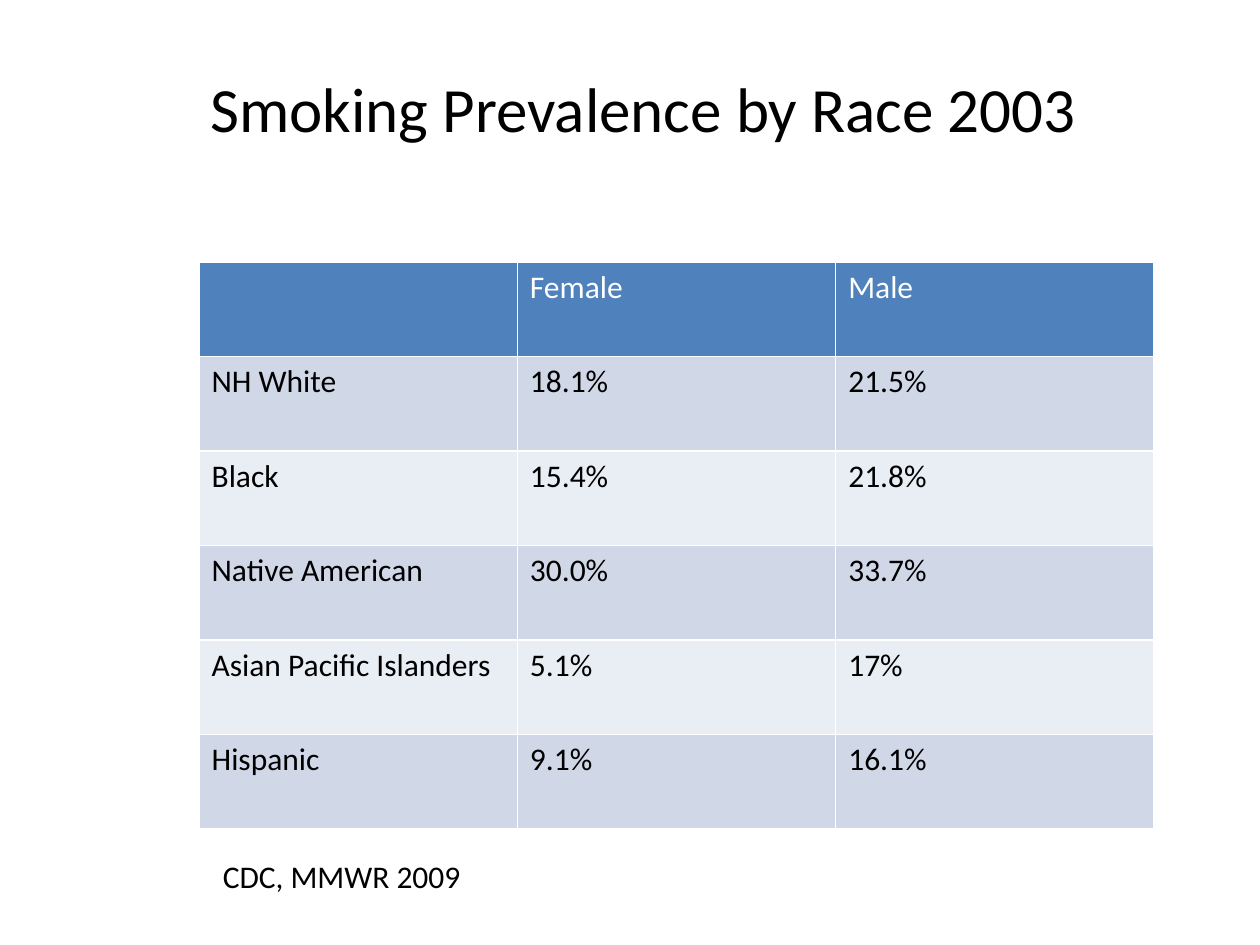
"""Build the slide on smoking prevalence by race."""
from dataclasses import dataclass

from pptx import Presentation
from pptx.dml.color import RGBColor
from pptx.enum.text import MSO_ANCHOR, MSO_AUTO_SIZE
from pptx.util import Inches, Pt

FONT = "Calibri"
BLACK, WHITE = "000000", "FFFFFF"
HEADER_FILL = "4F81BD"
BAND_FILLS = ("D0D8E8", "E9EDF4")


@dataclass(frozen=True)
class Prevalence:
    race: str
    female: str
    male: str


HEADINGS = Prevalence("", "Female", "Male")
GROUPS = (
    Prevalence("NH White", "18.1%", "21.5%"),
    Prevalence("Black", "15.4%", "21.8%"),
    Prevalence("Native American", "30.0%", "33.7%"),
    Prevalence("Asian Pacific Islanders", "5.1%", "17%"),
    Prevalence("Hispanic", "9.1%", "16.1%"),
)


def rgb(hex_color: str) -> RGBColor:
    return RGBColor.from_string(hex_color)


def write(frame, text: str, size: float, color: str) -> None:
    paragraph = frame.paragraphs[0]
    paragraph.text = text
    font = paragraph.font
    font.name, font.size, font.bold = FONT, Pt(size), False
    font.color.rgb = rgb(color)


def add_text(slide, text: str, left: float, top: float, width: float, height: float, size: float):
    box = slide.shapes.add_textbox(Inches(left), Inches(top), Inches(width), Inches(height))
    frame = box.text_frame
    frame.word_wrap = True
    write(frame, text, size, BLACK)
    return frame


def fill_row(cells, entry: Prevalence, fill: str, color: str) -> None:
    for cell, text in zip(cells, (entry.race, entry.female, entry.male)):
        cell.fill.solid()
        cell.fill.fore_color.rgb = rgb(fill)
        write(cell.text_frame, text, 18, color)


def add_prevalence_table(slide) -> None:
    table = slide.shapes.add_table(
        len(GROUPS) + 1, 3, Inches(1.58), Inches(2.08), Inches(7.58), Inches(4.5)
    ).table
    header, *body = table.rows
    fill_row(header.cells, HEADINGS, HEADER_FILL, WHITE)
    for index, (row, group) in enumerate(zip(body, GROUPS)):
        fill_row(row.cells, group, BAND_FILLS[index % 2], BLACK)


def main() -> None:
    deck = Presentation()
    deck.slide_width, deck.slide_height = Inches(10), Inches(7.5)
    slide = deck.slides.add_slide(deck.slide_layouts[6])

    title = add_text(slide, "Smoking Prevalence by Race 2003", 1.67, 0.5, 7.5, 0.7, 36)
    title.margin_left = title.margin_right = title.margin_top = title.margin_bottom = 0
    title.vertical_anchor = MSO_ANCHOR.MIDDLE

    add_prevalence_table(slide)

    citation = add_text(slide, "CDC, MMWR 2009", 1.67, 6.75, 3.67, 0.4, 18)
    citation.auto_size = MSO_AUTO_SIZE.SHAPE_TO_FIT_TEXT
    deck.save("out.pptx")


if __name__ == "__main__":
    main()
